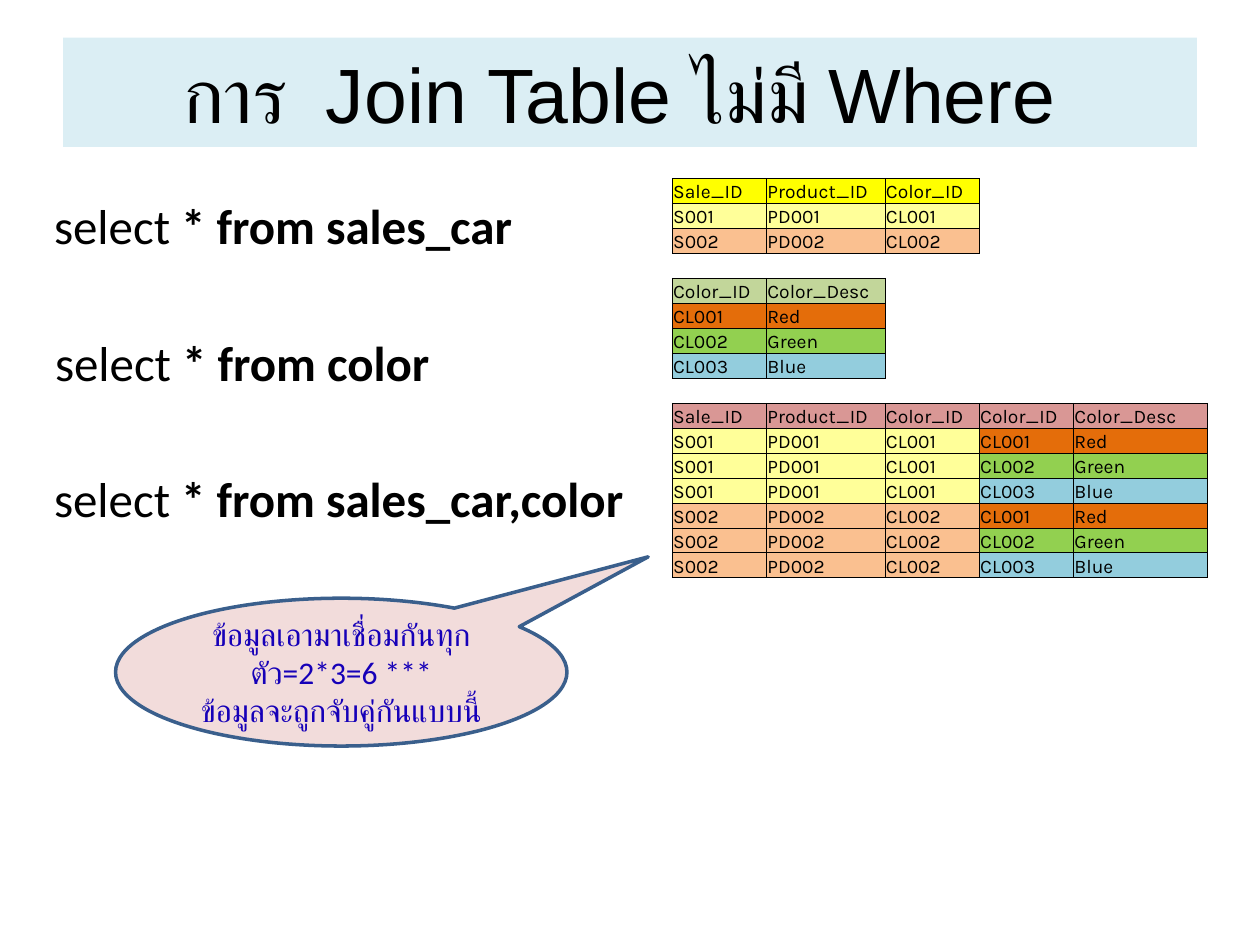
import pptx
import pptx.util
import pptx.dml.color
import pptx.enum.shapes
import pptx.enum.text
import pptx.oxml.ns
from lxml import etree

Cm = pptx.util.Cm
Pt = pptx.util.Pt
Align = pptx.enum.text.PP_ALIGN
Anchor = pptx.enum.text.MSO_ANCHOR

HUES = {
    "black": "000000", "band": "DBEEF4", "head1": "FFFF00", "head2": "C2D69A",
    "head3": "D99795", "S001": "FFFF99", "S002": "FAC090", "CL001": "E46D0A",
    "CL002": "92D050", "CL003": "93CDDD", "bubble": "F2DCDB",
    "edge": "3A5F8C", "note": "1600B8",
}
TITLE = "การ  Join Table ไม่มี Where "
SALES = [("S001", "PD001", "CL001"), ("S002", "PD002", "CL002")]
COLORS = [("CL001", "Red"), ("CL002", "Green"), ("CL003", "Blue")]
SALE_HEAD = ("Sale_ID", "Product_ID", "Color_ID")
COLOR_HEAD = ("Color_ID", "Color_Desc")
QUERIES = [
    (" * from color", 0.86, 6.58, 9.32, 2.64, True),
    (" * from sales_car,color", 0.84, 9.32, 12.12, 1.45, False),
    (" * from sales_car", 0.84, 3.81, 12.7, 1.45, True),
]
NOTES = ["ข้อมูลเอามาเชื่อมกันทุกตัว=2*3=6 ***", "ข้อมูลจะถูกจับคู่กันแบบนี้"]
WIDTHS = [1.9, 2.39, 1.9, 1.9, 2.7]
ROW = 0.503
PLAIN = "{2D5ABB26-0587-4C30-8999-92F81FD0307C}"


def rgb(name):
    return pptx.dml.color.RGBColor.from_string(HUES[name])


def paint(fill, name):
    fill.solid()
    fill.fore_color.rgb = rgb(name)


def write(para, text, size, face, hue="black", bold=None):
    run = para.add_run()
    run.text = text
    run.font.size = Pt(size)
    run.font.name = face
    run.font.bold = bold
    run.font.color.rgb = rgb(hue)


def shade(row, hue):
    return [(text, hue) for text in row]


def grid():
    sales = [shade(row, row[0]) for row in SALES]
    colors = [shade(row, row[0]) for row in COLORS]
    pairs = [sale + color for sale in sales for color in colors]
    return [
        shade(SALE_HEAD, "head1"), *sales, [],
        shade(COLOR_HEAD, "head2"), *colors, [],
        shade(SALE_HEAD + COLOR_HEAD, "head3"), *pairs,
    ]


def border(cell):
    props = cell._tc.get_or_add_tcPr()
    for spot, side in enumerate(("lnL", "lnR", "lnT", "lnB")):
        line = etree.Element(pptx.oxml.ns.qn("a:" + side), w=str(Pt(0.5)))
        fill = etree.SubElement(line, pptx.oxml.ns.qn("a:solidFill"))
        etree.SubElement(fill, pptx.oxml.ns.qn("a:srgbClr"), val=HUES["black"])
        props.insert(spot, line)


def add_grid(slide):
    rows = grid()
    frame = slide.shapes.add_table(
        len(rows), len(WIDTHS), Cm(13.55), Cm(3.6),
        Cm(sum(WIDTHS)), Cm(ROW * len(rows)))
    table = frame.table
    table.first_row = table.horz_banding = False
    table._tbl.tblPr.find(pptx.oxml.ns.qn("a:tableStyleId")).text = PLAIN
    for col, width in zip(table.columns, WIDTHS):
        col.width = Cm(width)
    for line, row in zip(table.rows, rows):
        line.height = Cm(ROW)
        for i, cell in enumerate(line.cells):
            cell.margin_left = cell.margin_right = cell.margin_top = Cm(0.02)
            cell.margin_bottom = 0
            cell.vertical_anchor = Anchor.BOTTOM
            para = cell.text_frame.paragraphs[0]
            if i < len(row):
                text, hue = row[i]
                write(para, text, 11, "Karla")
                paint(cell.fill, hue)
                border(cell)
            else:
                etree.SubElement(
                    para._p, pptx.oxml.ns.qn("a:endParaRPr"), sz="1100")
                cell.fill.background()


def add_title(slide):
    title = slide.shapes.title
    title.left, title.top = Cm(1.27), Cm(0.76)
    title.width, title.height = Cm(22.86), Cm(2.2)
    paint(title.fill, "band")
    title.text_frame.vertical_anchor = Anchor.MIDDLE
    para = title.text_frame.paragraphs[0]
    para.alignment = Align.CENTER
    write(para, TITLE, 44, "Arial")


def add_query(slide, tail, left, top, width, height, wrap):
    box = slide.shapes.add_textbox(Cm(left), Cm(top), Cm(width), Cm(height))
    box.text_frame.word_wrap = wrap
    para = box.text_frame.paragraphs[0]
    write(para, "select", 28, "Calibri")
    write(para, tail, 28, "Calibri", bold=True)


def add_note(slide):
    note = slide.shapes.add_shape(
        pptx.enum.shapes.MSO_SHAPE.OVAL_CALLOUT,
        Cm(2.33), Cm(12.06), Cm(9.1), Cm(2.98))
    note.adjustments[0], note.adjustments[1] = 0.68, -0.78
    note.shadow.inherit = False
    paint(note.fill, "bubble")
    note.line.color.rgb = rgb("edge")
    note.line.width = Pt(2)
    frame = note.text_frame
    frame.word_wrap = True
    frame.vertical_anchor = Anchor.MIDDLE
    for i, text in enumerate(NOTES):
        para = frame.add_paragraph() if i else frame.paragraphs[0]
        para.alignment = Align.CENTER
        write(para, text, 18, "Calibri", "note")


def main():
    deck = pptx.Presentation()
    deck.slide_width, deck.slide_height = Cm(25.4), Cm(19.05)
    slide = deck.slides.add_slide(deck.slide_layouts[5])
    add_title(slide)
    add_grid(slide)
    for query in QUERIES[:2]:
        add_query(slide, *query)
    add_note(slide)
    add_query(slide, *QUERIES[2])
    deck.save("out.pptx")


if __name__ == "__main__":
    main()
